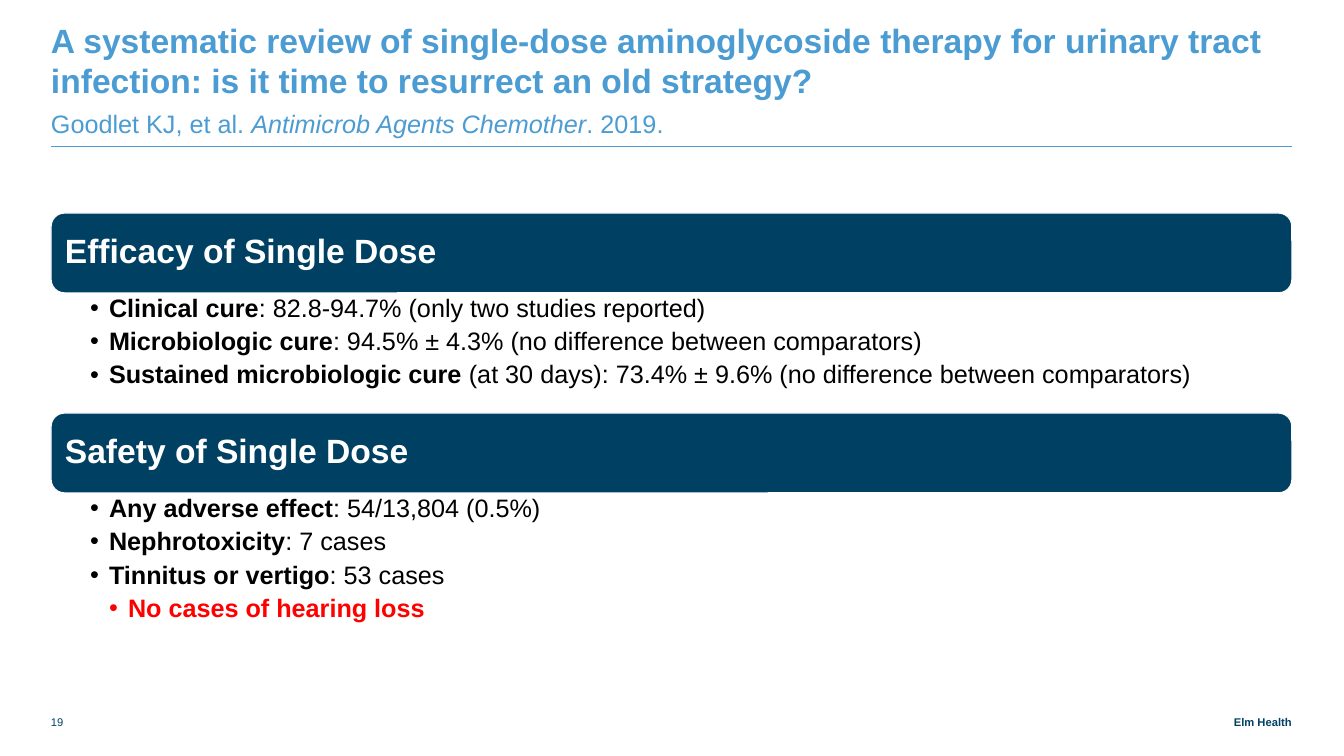
import pptx
import pptx.util
import pptx.dml.color
import pptx.enum.shapes
import pptx.enum.text
import lxml.etree
from pptx.oxml.ns import qn

# Content: runs are (text, format values)
BOLD, PLAIN = {"bold": True}, {"bold": False}
TITLE = ("A systematic review of single-dose aminoglycoside therapy for urinary "
         "tract infection: is it time to resurrect an old strategy?")
CITATION = [("Goodlet KJ, et al. ", {"italic": False}),
            ("Antimicrob Agents Chemother", {"italic": True}),
            (". 2019.", {"italic": False})]
# Findings are (level, bold label, plain detail)
SECTIONS = [
    ("Efficacy of Single Dose", [
        (1, "Clinical cure", ": 82.8-94.7% (only two studies reported)"),
        (1, "Microbiologic cure", ": 94.5% ± 4.3% (no difference between comparators)"),
        (1, "Sustained microbiologic cure ",
         "(at 30 days): 73.4% ± 9.6% (no difference between comparators)"),
    ]),
    ("Safety of Single Dose", [
        (1, "Any adverse effect", ": 54/13,804 (0.5%)"),
        (1, "Nephrotoxicity", ": 7 cases"),
        (1, "Tinnitus or vertigo", ": 53 cases"),
        (2, "No cases of hearing loss", ""),
    ]),
]
PAGE_NUMBER = "19"
ORGANIZATION = "Elm Health"

THEME = {
    "font": "Arial",
    "sky": "4B9CD3", "navy": "004163", "white": "FFFFFF", "black": "000000", "alert": "FF0000",
    "heading": 24, "body": 18, "footer": 8,
}

# Layout in px
SLIDE_WIDTH, SLIDE_HEIGHT = 1344, 756
LEFT, WIDTH = 51, 1241
RULE_Y = 146
BANNER_TOP, BANNER_HEIGHT, SECTION_PITCH = 213, 80, 200
BODY_HEIGHTS = (119, 130)
BULLET_STEP = 19
FOOTER_TOP, FOOTER_HEIGHT = 706, 23
ALIGN = pptx.enum.text.PP_ALIGN
ANCHOR = pptx.enum.text.MSO_ANCHOR


def px(length):
    return pptx.util.Emu(round(length * 12192000 / SLIDE_WIDTH))


def color(name):
    return pptx.dml.color.RGBColor.from_string(THEME[name])


def set_values(target, values):
    for name, value in values.items():
        setattr(target, name, value)


def place(shape, left, top, width, height):
    set_values(shape, {"left": px(left), "top": px(top),
                       "width": px(width), "height": px(height)})


def prepare_frame(shape, anchor, insets=(0, 0, 0, 0)):
    sides = ("margin_left", "margin_top", "margin_right", "margin_bottom")
    frame = shape.text_frame
    set_values(frame, {"word_wrap": True, "vertical_anchor": anchor,
                       "auto_size": pptx.enum.text.MSO_AUTO_SIZE.NONE})
    set_values(frame, dict(zip(sides, map(px, insets))))
    return frame


def add_run(paragraph, text, size, color_name, values):
    run = paragraph.add_run()
    run.text = text
    set_values(run.font, {"name": THEME["font"], "size": pptx.util.Pt(THEME[size]), **values})
    run.font.color.rgb = color(color_name)


def add_bullet(paragraph, level):
    properties = paragraph._p.get_or_add_pPr()
    properties.set("marL", str(px(BULLET_STEP * level)))
    properties.set("indent", str(-px(BULLET_STEP)))
    lxml.etree.SubElement(properties, qn("a:buFont")).set("typeface", THEME["font"])
    lxml.etree.SubElement(properties, qn("a:buChar")).set("char", "•")


def add_title(slide):
    title = slide.shapes.title
    place(title, LEFT, 30, WIDTH, 109)
    paragraph = prepare_frame(title, ANCHOR.BOTTOM).paragraphs[0]
    set_values(paragraph, {"alignment": ALIGN.LEFT, "line_spacing": pptx.util.Pt(28)})
    add_run(paragraph, TITLE, "heading", "sky", BOLD)
    paragraph.add_line_break()
    for text, values in CITATION:
        add_run(paragraph, text, "body", "sky", {**PLAIN, **values})


def add_rule(slide):
    rule = slide.shapes.add_connector(pptx.enum.shapes.MSO_CONNECTOR.STRAIGHT,
                                      px(LEFT), px(RULE_Y), px(LEFT + WIDTH), px(RULE_Y))
    rule.line.color.rgb = color("sky")
    rule.line.width = pptx.util.Pt(0.5)
    lxml.etree.SubElement(rule._element.spPr, qn("a:effectLst"))


def add_banner(slide, top, heading):
    banner = slide.shapes.add_shape(pptx.enum.shapes.MSO_SHAPE.ROUNDED_RECTANGLE,
                                    px(LEFT), px(top), px(WIDTH), px(BANNER_HEIGHT))
    banner.shadow.inherit = False
    banner.fill.solid()
    banner.fill.fore_color.rgb = color("navy")
    banner.line.color.rgb = color("white")
    banner.line.width = pptx.util.Pt(1)
    paragraph = prepare_frame(banner, ANCHOR.MIDDLE, (10, 4, 10, 4)).paragraphs[0]
    set_values(paragraph, {"alignment": ALIGN.LEFT, "line_spacing": 0.9})
    add_run(paragraph, heading, "heading", "white", BOLD)


def fill_findings(body, top, height, findings):
    place(body, LEFT, top, WIDTH, height)
    frame = prepare_frame(body, ANCHOR.TOP, (39, 3, 14, 3))
    for index, (level, label, detail) in enumerate(findings):
        paragraph = frame.add_paragraph() if index else frame.paragraphs[0]
        set_values(paragraph, {"level": level, "line_spacing": 0.9,
                               "space_before": pptx.util.Pt(0),
                               "space_after": pptx.util.Pt(4.2)})
        add_bullet(paragraph, level)
        add_run(paragraph, label, "body", "alert" if level == 2 else "black", BOLD)
        if detail:
            add_run(paragraph, detail, "body", "black", PLAIN)


def add_footer(slide, left, width, text, alignment, values):
    box = slide.shapes.add_textbox(px(left), px(FOOTER_TOP), px(width), px(FOOTER_HEIGHT))
    paragraph = prepare_frame(box, ANCHOR.BOTTOM).paragraphs[0]
    paragraph.alignment = alignment
    add_run(paragraph, text, "footer", "navy", values)


def main():
    presentation = pptx.Presentation()
    set_values(presentation, {"slide_width": px(SLIDE_WIDTH), "slide_height": px(SLIDE_HEIGHT)})
    # Layout 3 holds a title and two bodies
    slide = presentation.slides.add_slide(presentation.slide_layouts[3])

    # Header
    add_title(slide)
    add_rule(slide)

    # Sections
    for index, (heading, findings) in enumerate(SECTIONS):
        top = BANNER_TOP + index * SECTION_PITCH
        add_banner(slide, top, heading)
        fill_findings(slide.placeholders[index + 1], top + BANNER_HEIGHT,
                      BODY_HEIGHTS[index], findings)

    # Footer
    add_footer(slide, LEFT, 46, PAGE_NUMBER, ALIGN.LEFT, PLAIN)
    add_footer(slide, LEFT + WIDTH - 165, 165, ORGANIZATION, ALIGN.RIGHT, BOLD)

    presentation.save("out.pptx")


if __name__ == "__main__":
    main()
